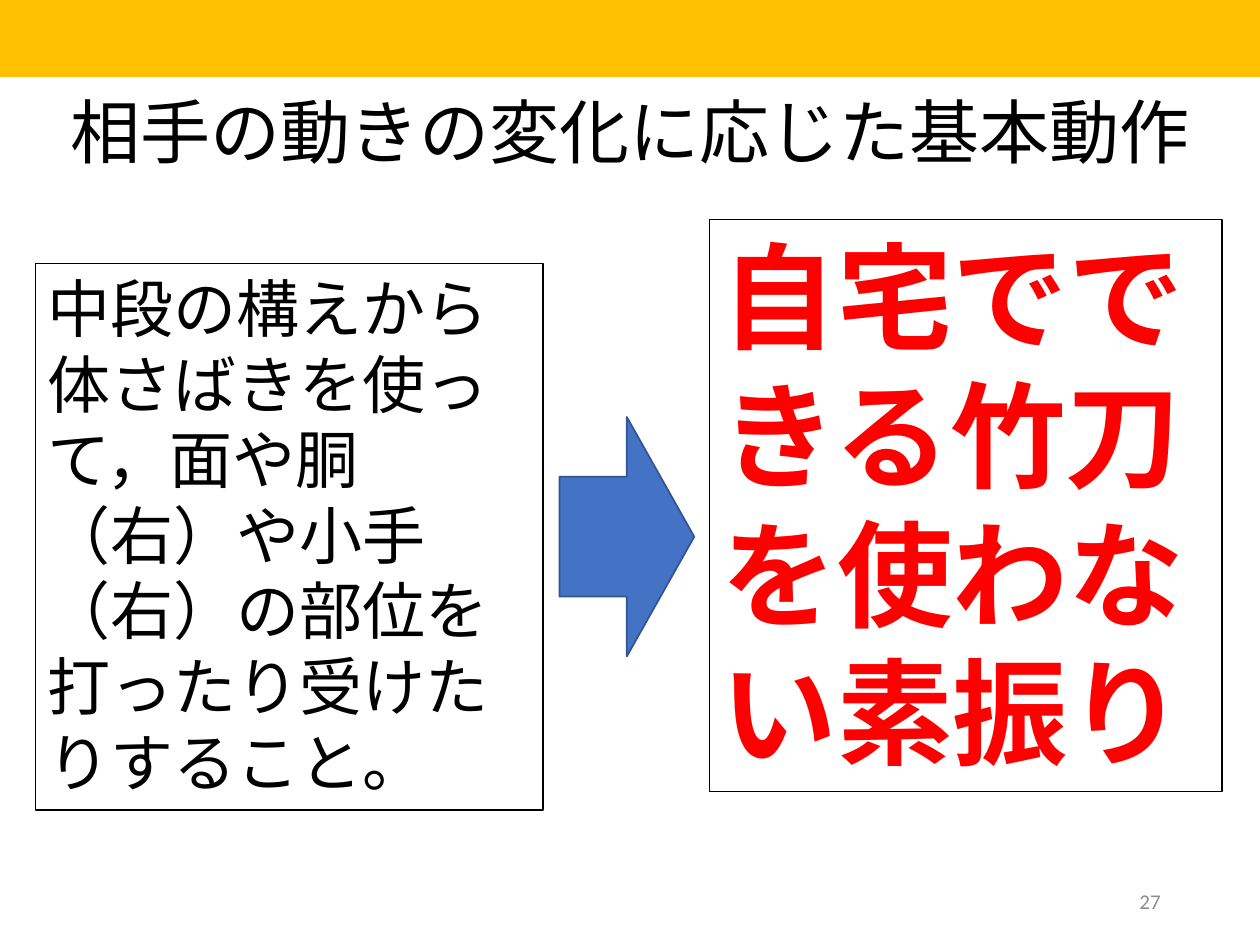
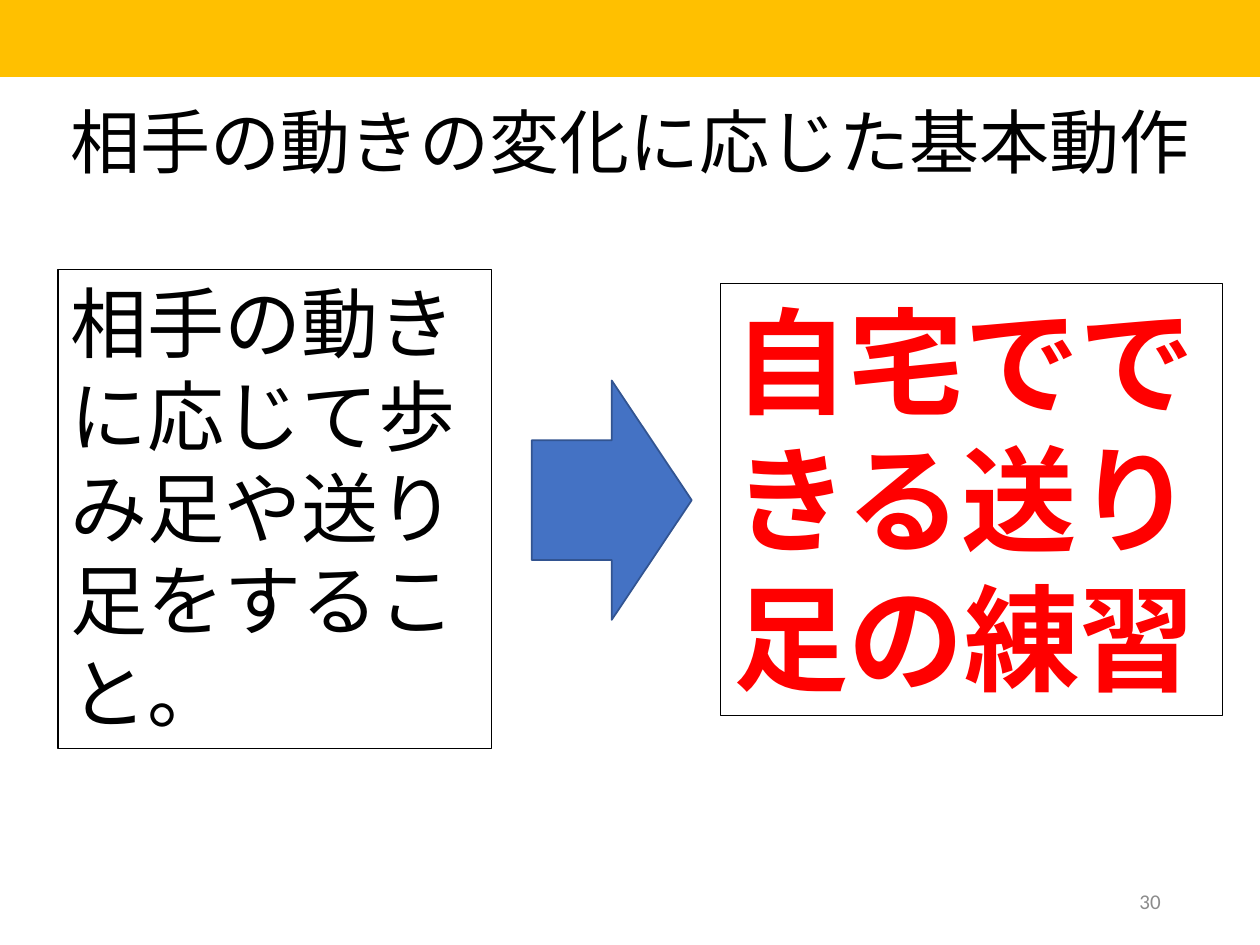
from pptx import Presentation
from pptx.dml.color import RGBColor
from pptx.enum.lang import MSO_LANGUAGE_ID as Lang
from pptx.enum.shapes import MSO_SHAPE as Shape
from pptx.enum.text import MSO_ANCHOR as Anchor, MSO_AUTO_SIZE as AutoSize, PP_ALIGN as Align
from pptx.util import Inches, Pt

AMBER = RGBColor(0xFF, 0xC0, 0x00)
BLUE = RGBColor(0x44, 0x72, 0xC4)
DARK_BLUE = RGBColor(0x32, 0x54, 0x91)
BLACK = RGBColor(0, 0, 0)
RED = RGBColor(0xFF, 0, 0)
GRAY = RGBColor(0x8C, 0x8C, 0x8C)
FONT = "Calibri"
TITLE = "相手の動きの変化に応じた基本動作"

# Places are left, top, width, height in inches.
LESSONS = [
    dict(number="27", title_top=0.73,
         skill="中段の構えから体さばきを使って，面や胴（右）や小手（右）の部位を打ったり受けたりすること。",
         skill_size=36, skill_at=(0.28, 2.09, 4.03, 4.34),
         arrow_at=(4.44, 3.31, 1.07, 1.9),
         practice="自宅でできる竹刀を使わない素振り", practice_at=(5.63, 1.74, 4.07, 4.54)),
    dict(number="30", title_top=0.81,
         skill="相手の動きに応じて歩み足や送り足をすること。",
         skill_size=44, skill_at=(0.46, 2.14, 3.44, 3.8),
         arrow_at=(4.22, 3.02, 1.27, 1.9),
         practice="自宅でできる送り足の練習", practice_at=(5.72, 2.25, 3.98, 3.43)),
]


def add_text(slide, at, text, size, color, bold=False, framed=False):
    """Add a wrapped text box; a framed one has a thin border and fits its text."""
    box = slide.shapes.add_textbox(*map(Inches, at))
    frame = box.text_frame
    frame.word_wrap = True
    if framed:
        frame.auto_size = AutoSize.SHAPE_TO_FIT_TEXT
        box.line.color.rgb = BLACK
        box.line.width = Pt(0.75)
    paragraph = frame.paragraphs[0]
    paragraph.text = text
    font = paragraph.font
    font.name, font.size, font.bold = FONT, Pt(size), bold
    font.color.rgb = color
    font.language_id = Lang.JAPANESE
    return frame


def add_filled(slide, kind, at, fill):
    shape = slide.shapes.add_shape(kind, *map(Inches, at))
    shape.shadow.inherit = False
    shape.fill.solid()
    shape.fill.fore_color.rgb = fill
    return shape


prs = Presentation()
prs.slide_width, prs.slide_height = Inches(10), Inches(7.5)

for lesson in LESSONS:
    slide = prs.slides.add_slide(prs.slide_layouts[6])

    band = add_filled(slide, Shape.RECTANGLE, (-0.02, 0, 10.02, 0.61), AMBER)
    band.line.fill.background()

    number = add_text(slide, (7.06, 6.95, 2.25, 0.4), lesson["number"], 12, GRAY)
    number.vertical_anchor = Anchor.MIDDLE
    number.paragraphs[0].alignment = Align.RIGHT

    title = add_text(slide, (0.46, lesson["title_top"], 9.43, 0.72), TITLE, 40, BLACK)
    title.paragraphs[0].line_spacing = 0.9

    add_text(slide, lesson["skill_at"], lesson["skill"], lesson["skill_size"], BLACK, framed=True)

    arrow = add_filled(slide, Shape.RIGHT_ARROW, lesson["arrow_at"], BLUE)
    arrow.line.color.rgb = DARK_BLUE
    arrow.line.width = Pt(1)

    add_text(slide, lesson["practice_at"], lesson["practice"], 66, RED, bold=True, framed=True)

prs.save("out.pptx")
